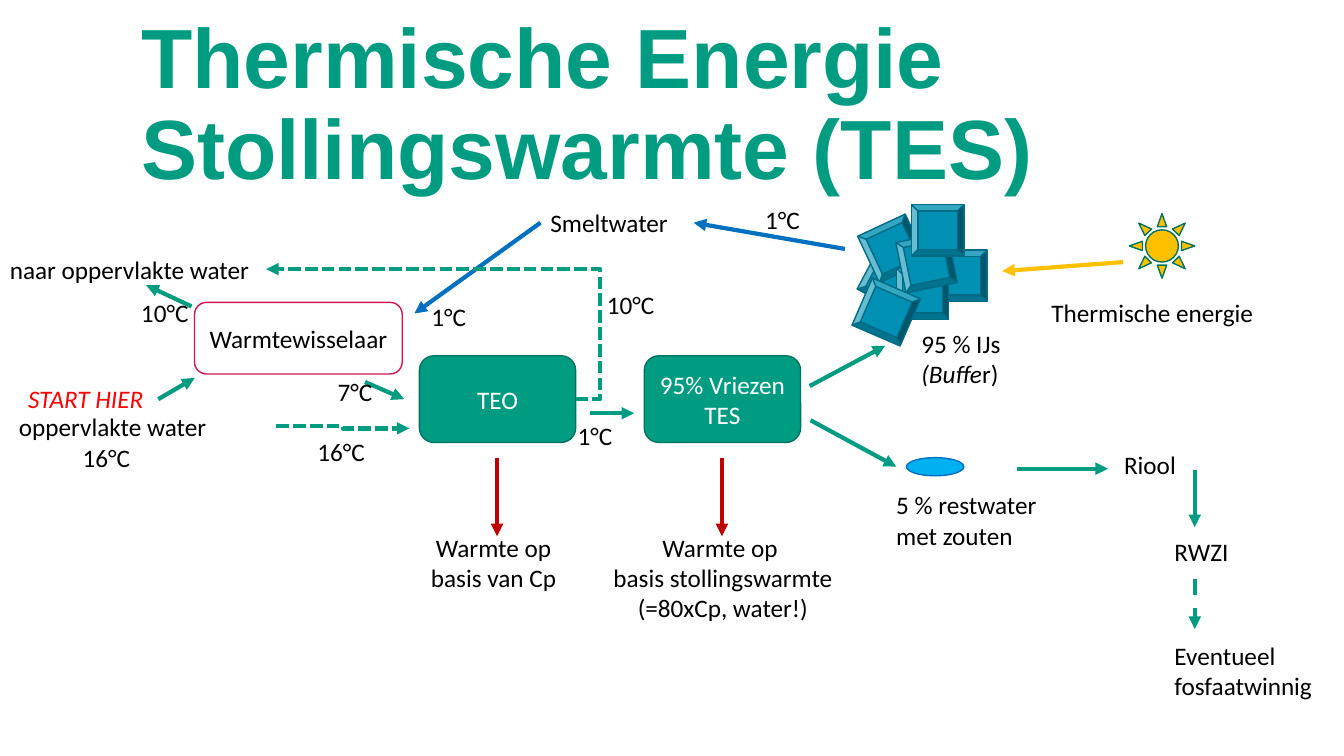
import pptx
import pptx.dml.color
import pptx.enum.dml
import pptx.enum.shapes
import pptx.enum.text
import pptx.oxml
import pptx.oxml.ns
import pptx.util

Inches = pptx.util.Inches
Pt = pptx.util.Pt
SHAPE = pptx.enum.shapes.MSO_SHAPE
CONNECTOR = pptx.enum.shapes.MSO_CONNECTOR
DASH = pptx.enum.dml.MSO_LINE
ALIGN = pptx.enum.text.PP_ALIGN
LEFT, CENTER = ALIGN.LEFT, ALIGN.CENTER

GREEN, DARK_GREEN = "009C82", "007360"
BLUE, RED, YELLOW = "0070C0", "C00000", "FFC000"
BLACK, WHITE = "000000", "FFFFFF"
ICE, ICE_EDGE = "0090B3", "006B84"


def colour(value):
    return pptx.dml.color.RGBColor.from_string(value)


def write(frame, text, text_colour, align, size=18, font="Calibri"):
    """Fill a text frame with one evenly formatted paragraph."""
    frame.word_wrap = True
    frame.text = text
    para = frame.paragraphs[0]
    para.alignment = align
    for span in para.runs:
        span.font.name = font
        span.font.size = Pt(size)
        span.font.color.rgb = colour(text_colour)


deck = pptx.Presentation()
deck.slide_width, deck.slide_height = Inches(13.33), Inches(7.5)
page = deck.slides.add_slide(deck.slide_layouts.get_by_name("Title Only"))

# Title
title = page.shapes.title
title.left, title.top = Inches(1.3), Inches(0.63)
title.width, title.height = Inches(12.04), Inches(0.86)
write(title.text_frame, "Thermische Energie Stollingswarmte (TES)", GREEN, LEFT, 60, "Arial")
title.text_frame.auto_size = pptx.enum.text.MSO_AUTO_SIZE.NONE
title.text_frame.vertical_anchor = pptx.enum.text.MSO_ANCHOR.MIDDLE
title.text_frame.paragraphs[0].line_spacing = 0.9
title.text_frame.paragraphs[0].runs[0].font.bold = True

# Process steps, ice blocks, waste water and sun
# kind, left, top, width, height, rotation, fill, line, text, text colour
ice_blocks = [
    (8.59, 2.51, 28), (9.27, 2.48, 0), (8.59, 2.21, 335), (8.89, 2.66, 0),
    (8.93, 2.35, 348.6), (9.04, 2.03, 0), (8.53, 2.84, 23.4),
]
shapes = [
    (SHAPE.ROUNDED_RECTANGLE, 4.16, 3.53, 1.55, 0.86, 0, GREEN, DARK_GREEN, "TEO", WHITE),
    (SHAPE.ROUNDED_RECTANGLE, 6.39, 3.53, 1.55, 0.86, 0, GREEN, DARK_GREEN,
     "95% Vriezen\vTES", WHITE),
    (SHAPE.ROUNDED_RECTANGLE, 1.93, 3, 2.06, 0.71, 0, WHITE, "CE154F", "Warmtewisselaar", BLACK),
    *[(SHAPE.BEVEL, left, top, 0.52, 0.51, turn, ICE, ICE_EDGE, "", WHITE)
      for left, top, turn in ice_blocks],
    (SHAPE.OVAL, 8.99, 4.54, 0.57, 0.18, 0, "00B0F0", BLUE, "", WHITE),
    (SHAPE.SUN, 11.2, 2.12, 0.65, 0.64, 0, YELLOW, DARK_GREEN, "", WHITE),
]
for kind, left, top, width, height, turn, fill, edge, text, text_colour in shapes:
    shape = page.shapes.add_shape(kind, Inches(left), Inches(top), Inches(width), Inches(height))
    shape.shadow.inherit = False
    shape.rotation = turn
    shape.fill.solid()
    shape.fill.fore_color.rgb = colour(fill)
    shape.line.color.rgb = colour(edge)
    shape.line.width = Pt(1)
    if text:
        write(shape.text_frame, text, text_colour, CENTER)

# Arrows: from x, from y, to x, to y, colour, dash, bend (None for a straight arrow)
arrows = [
    (8.03, 3.83, 8.78, 3.43, GREEN, None, None),
    (8.04, 4.17, 8.89, 4.63, GREEN, None, None),
    (8.38, 2.47, 6.88, 2.21, BLUE, None, None),
    (10.09, 4.65, 10.99, 4.65, GREEN, None, None),
    (11.85, 4.66, 11.85, 5.23, GREEN, None, None),
    (11.85, 5.74, 11.85, 6.24, GREEN, DASH.DASH, None),
    (5.85, 4.1, 6.29, 4.1, GREEN, None, None),
    (3.62, 3.79, 4.01, 3.96, GREEN, None, None),
    (4.93, 4.54, 4.93, 5.32, RED, None, None),
    (7.16, 4.54, 7.16, 5.32, RED, None, None),
    (5.36, 2.21, 4.11, 3.11, BLUE, None, None),
    (1.57, 3.96, 1.93, 3.75, GREEN, None, None),
    (1.9, 3.04, 1.45, 2.83, GREEN, None, None),
    (5.71, 3.96, 2.64, 2.67, GREEN, DASH.SQUARE_DOT, -0.08),
    (2.74, 4.23, 4.06, 4.25, GREEN, DASH.SQUARE_DOT, 0.5),
    (11.14, 2.6, 9.94, 2.69, YELLOW, None, None),
]
for x1, y1, x2, y2, line_colour, dash, bend in arrows:
    kind = CONNECTOR.STRAIGHT if bend is None else CONNECTOR.ELBOW
    arrow = page.shapes.add_connector(kind, Inches(x1), Inches(y1), Inches(x2), Inches(y2))
    arrow.line.color.rgb = colour(line_colour)
    arrow.line.width = Pt(3)
    if dash is not None:
        arrow.line.dash_style = dash
    properties = arrow.element.spPr
    outline = properties.find(pptx.oxml.ns.qn("a:ln"))
    outline.append(pptx.oxml.parse_xml(
        f'<a:tailEnd {pptx.oxml.ns.nsdecls("a")} type="triangle"/>'))
    properties.append(pptx.oxml.parse_xml(f'<a:effectLst {pptx.oxml.ns.nsdecls("a")}/>'))
    if bend is not None:
        geometry = properties.find(pptx.oxml.ns.qn("a:prstGeom"))
        for guides in list(geometry):
            geometry.remove(guides)
        geometry.append(pptx.oxml.parse_xml(
            f'<a:avLst {pptx.oxml.ns.nsdecls("a")}>'
            f'<a:gd name="adj1" fmla="val {round(bend * 100000)}"/></a:avLst>'))

# Labels: left, top, width, height, text, alignment
labels = [
    (0, 2.47, 2.64, 0.4, "naar oppervlakte water", LEFT),
    (8.79, 4.81, 1.91, 0.71, "5 % restwater met zouten", LEFT),
    (11.55, 5.27, 1.37, 0.4, "RWZI", LEFT),
    (11.55, 6.3, 1.81, 0.71, "Eventueel fosfaatwinnig", LEFT),
    (11.05, 4.41, 1.37, 0.4, "Riool", LEFT),
    (4.11, 5.23, 1.57, 0.71, "Warmte op basis van Cp", CENTER),
    (5.96, 5.23, 2.42, 1.01, "Warmte op \vbasis stollingswarmte (=80xCp, water!)", CENTER),
    (5.36, 2.01, 1.52, 0.4, "Smeltwater", LEFT),
    (0.09, 4.03, 2.64, 0.4, "oppervlakte water", LEFT),
    (10.33, 2.9, 2.3, 0.4, "Thermische energie", LEFT),
]
temperatures = [
    (0.72, 4.34, 16), (5.92, 2.82, 10), (5.63, 4.12, 1), (7.49, 1.98, 1),
    (4.18, 2.94, 1), (1.3, 2.9, 10), (3.25, 3.68, 7), (3.05, 4.28, 16),
]
labels += [(left, top, 0.79, 0.4, f"{degrees}°C", LEFT) for left, top, degrees in temperatures]
for left, top, width, height, text, align in labels:
    box = page.shapes.add_textbox(Inches(left), Inches(top), Inches(width), Inches(height))
    write(box.text_frame, text, BLACK, align)

start = page.shapes.add_textbox(Inches(0.18), Inches(3.75), Inches(1.57), Inches(0.42))
write(start.text_frame, "START HIER", "FF0000", LEFT)
start.text_frame.paragraphs[0].runs[0].font.italic = True

buffer = page.shapes.add_textbox(Inches(9.04), Inches(3.21), Inches(1.37), Inches(0.71))
write(buffer.text_frame, "95 % IJs\v(Buffe", BLACK, LEFT)
buffer_para = buffer.text_frame.paragraphs[0]
buffer_para.runs[1].font.italic = True
ending = buffer_para.add_run()
ending.text = "r)"
ending.font.name = "Calibri"
ending.font.size = Pt(18)
ending.font.color.rgb = colour(BLACK)

deck.save("out.pptx")
